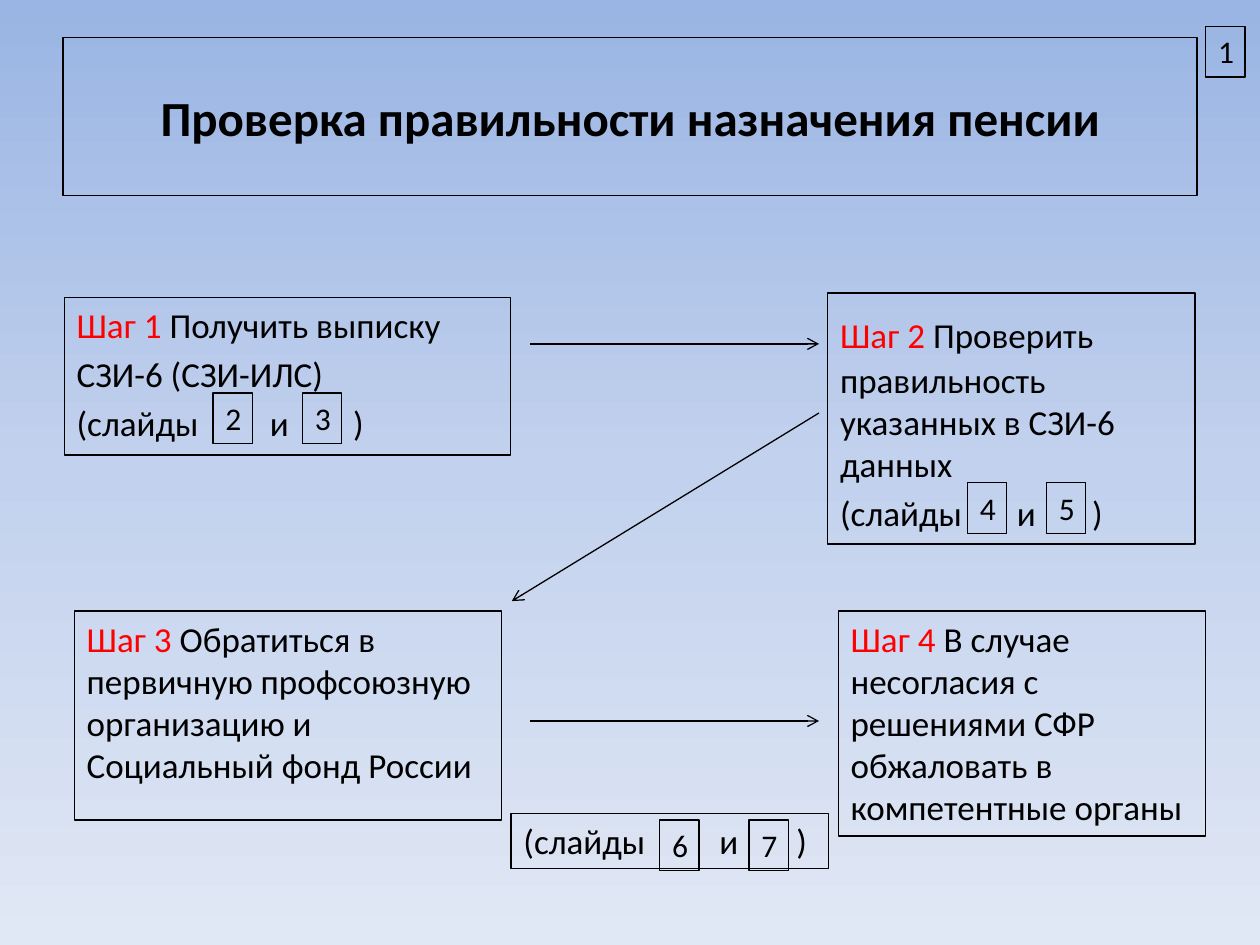
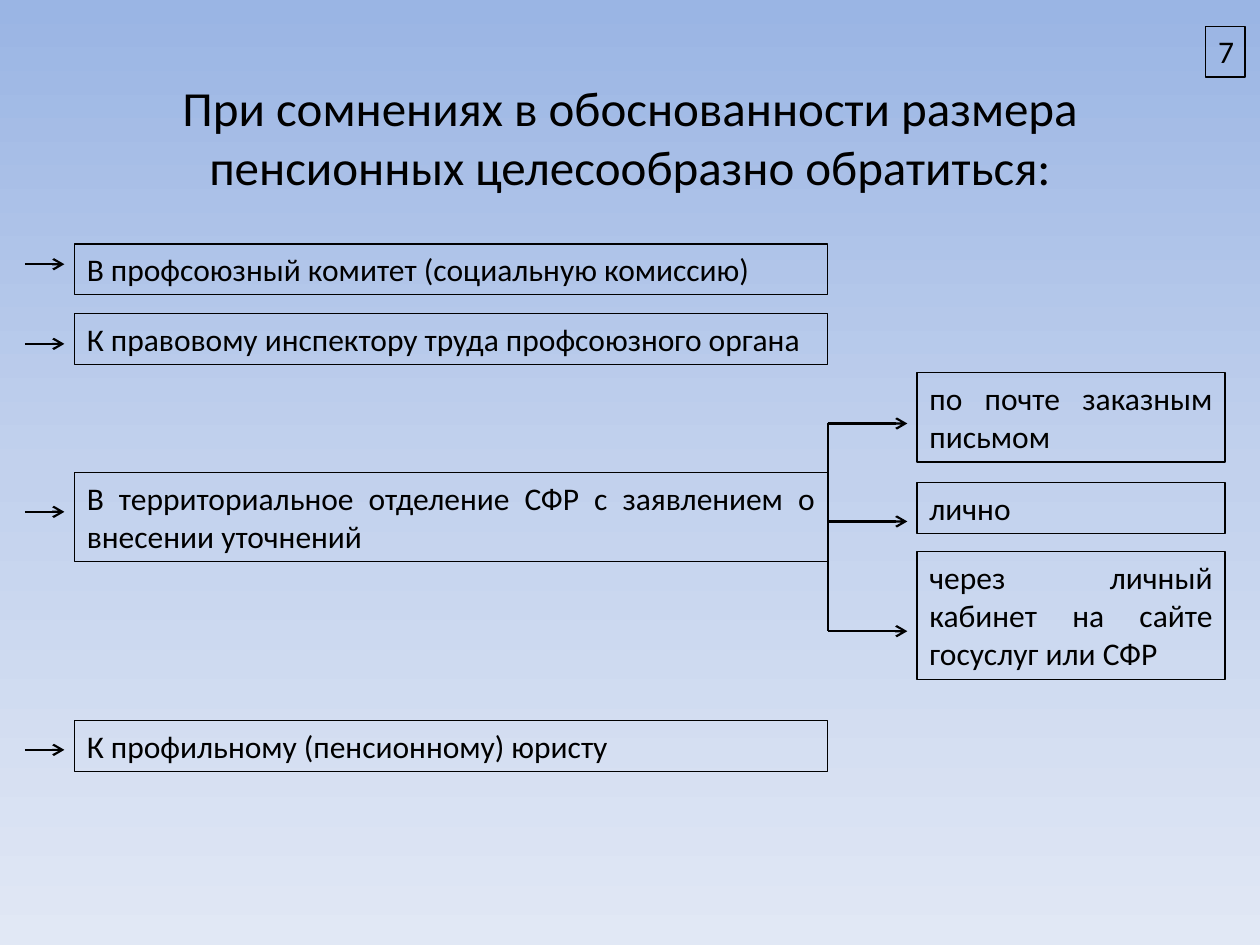
import copy
from dataclasses import dataclass

import lxml.etree
import pptx
import pptx.dml.color
import pptx.enum.shapes
import pptx.enum.text
import pptx.oxml.ns
import pptx.util

Pt = pptx.util.Pt
RGBColor = pptx.dml.color.RGBColor
qn = pptx.oxml.ns.qn
ALIGN = pptx.enum.text.PP_ALIGN


@dataclass(frozen=True)
class Theme:
    font: str = "Calibri"
    ink: RGBColor = RGBColor(0, 0, 0)
    accent: RGBColor = RGBColor(255, 0, 0)
    gradient: tuple = ((0, "9AB5E4"), (0.5, "C2D1ED"), (1, "E1E8F5"))
    title_size: float = 28
    step_size: float = 20
    text_size: float = 18
    thin: float = 0.75
    thick: float = 1.25


class Deck:
    def __init__(self, theme):
        self.theme = theme
        self.presentation = pptx.Presentation()
        self.presentation.slide_width = Pt(720)
        self.presentation.slide_height = Pt(540)
        self.slide = None
        self.paint_background()

    def paint_background(self):
        master = self.presentation.slide_master
        fill = master.background.fill
        fill.gradient()
        fill.gradient_angle = 270
        stop_list = master.element.find(".//" + qn("a:gsLst"))
        stop_list.insert(1, copy.deepcopy(stop_list[0]))
        for stop, (position, colour) in zip(fill.gradient_stops, self.theme.gradient):
            stop.position = position
            stop.color.rgb = RGBColor.from_string(colour)

    def add_slide(self, title, number, top=21.6, bold=False, framed=False):
        layout = self.presentation.slide_layouts[5]
        self.slide = self.presentation.slides.add_slide(layout)
        shape = self.slide.shapes.title
        shape.left, shape.top, shape.width, shape.height = Pt(36), Pt(top), Pt(648), Pt(90)
        shape.text_frame.text = title
        paragraph = shape.text_frame.paragraphs[0]
        paragraph.alignment = ALIGN.CENTER
        self.set_font(paragraph.font, self.theme.title_size)
        paragraph.font.bold = bold
        if framed:
            self.set_line(shape.line, self.theme.thin)
        self.badge(689, 15, number)

    def set_font(self, font, size):
        font.name = self.theme.font
        font.size = Pt(size)
        font.color.rgb = self.theme.ink

    def set_line(self, line, width):
        line.color.rgb = self.theme.ink
        line.width = Pt(width)

    def frame(self, left, top, width, height, wrap=True):
        shape = self.slide.shapes.add_textbox(Pt(left), Pt(top), Pt(width), Pt(height))
        self.set_line(shape.line, self.theme.thin)
        shape.text_frame.word_wrap = wrap
        return shape.text_frame

    def box(self, left, top, width, height, text):
        paragraph = self.frame(left, top, width, height).paragraphs[0]
        paragraph.text = text
        paragraph.alignment = ALIGN.JUSTIFY
        self.set_font(paragraph.font, self.theme.text_size)

    def badge(self, left, top, number):
        paragraph = self.frame(left, top, 22.5, 29, wrap=False).paragraphs[0]
        paragraph.text = str(number)
        self.set_font(paragraph.font, self.theme.text_size)

    def step(self, left, top, width, height, label="", lines=(), lead="", tabs=()):
        text_frame = self.frame(left, top, width, height)
        texts = list(lines) + (["(слайды\tи\t)"] if tabs else [])
        for index, text in enumerate(texts):
            paragraph = text_frame.paragraphs[0] if index == 0 else text_frame.add_paragraph()
            self.set_font(paragraph.font, self.theme.step_size)
            if index:
                paragraph.space_before = Pt(4)
            elif label:
                paragraph.add_run().text = label + " "
                paragraph.runs[0].font.color.rgb = self.theme.accent
            if index == 0 and lead:
                paragraph.add_run().text = lead
                gap = paragraph.add_run()
                gap.text = " "
                gap.font.size = Pt(self.theme.title_size)
            paragraph.add_run().text = text
        if tabs:
            self.set_tabs(paragraph, tabs)

    def set_tabs(self, paragraph, positions):
        tab_list = lxml.etree.Element(qn("a:tabLst"))
        for position in positions:
            lxml.etree.SubElement(tab_list, qn("a:tab"), pos=str(Pt(position)), algn="l")
        paragraph._p.pPr.find(qn("a:defRPr")).addprevious(tab_list)

    def connect(self, start, end, width, arrow=True):
        connector = self.slide.shapes.add_connector(
            pptx.enum.shapes.MSO_CONNECTOR.STRAIGHT, *map(Pt, start + end))
        self.set_line(connector.line, width)
        properties = connector._element.spPr
        if arrow:
            lxml.etree.SubElement(properties.find(qn("a:ln")), qn("a:tailEnd"), type="arrow")
        lxml.etree.SubElement(properties, qn("a:effectLst"))


def build_steps(deck):
    deck.add_slide("Проверка правильности назначения пенсии", 1, bold=True, framed=True)
    deck.step(36.7, 170, 255, 90, "Шаг 1",
              ["Получить выписку", "СЗИ-6 (СЗИ-ИЛС)"], tabs=(110.5, 158))
    deck.step(473, 167.5, 210, 143.5, "Шаг 2",
              ["правильность указанных в СЗИ-6 данных"], "Проверить", (101, 144))
    deck.step(42.5, 349.2, 244, 119.5, "Шаг 3",
              ["Обратиться в первичную профсоюзную организацию и Социальный фонд России"])
    deck.step(479, 349.2, 210, 128.5, "Шаг 4",
              ["В случае несогласия с решениями СФР обжаловать в компетентные органы"])
    deck.step(292, 465, 181.5, 31.5, tabs=(112, 156))
    for start, end in (((303, 196.5), (468, 196.5)),
                       ((468, 236), (292.5, 343.5)),
                       ((303, 412), (468, 412))):
        deck.connect(start, end, deck.theme.thin)
    for number, left, top in ((2, 121.7, 224.5), (3, 172.8, 224.5), (4, 552.8, 275.7),
                              (5, 598, 275.7), (6, 377, 468.5), (7, 428, 468.5)):
        deck.badge(left, top, number)


def build_contacts(deck):
    deck.add_slide("При сомнениях в обоснованности размера пенсионных "
                   "целесообразно обратиться:", 7, top=33)
    trunk = 473
    for top, height, arrow_y, text in (
            (139.5, 29, 151, "В профсоюзный комитет (социальную комиссию)"),
            (179.3, 29, 196.5, "К правовому инспектору труда профсоюзного органа"),
            (270, 51, 292.5, "В территориальное отделение СФР с заявлением о внесении уточнений"),
            (411.8, 29, 428.5, "К профильному (пенсионному) юристу")):
        deck.box(42.5, top, trunk - 42.5, height, text)
        deck.connect((14.2, arrow_y), (36.8, arrow_y), deck.theme.thick)
    branches = ((213, 51, 242, "по почте заказным письмом"),
                (275.7, 29, 298, "лично"),
                (315.3, 73, 360.7, "через личный кабинет на сайте госуслуг или СФР"))
    for top, height, arrow_y, text in branches:
        deck.box(524, top, 176, height, text)
        deck.connect((trunk, arrow_y), (518.5, arrow_y), deck.theme.thick)
    deck.connect((trunk, branches[0][2]), (trunk, branches[-1][2]), deck.theme.thick, arrow=False)


def main():
    deck = Deck(Theme())
    build_steps(deck)
    build_contacts(deck)
    deck.presentation.save("out.pptx")


if __name__ == "__main__":
    main()
